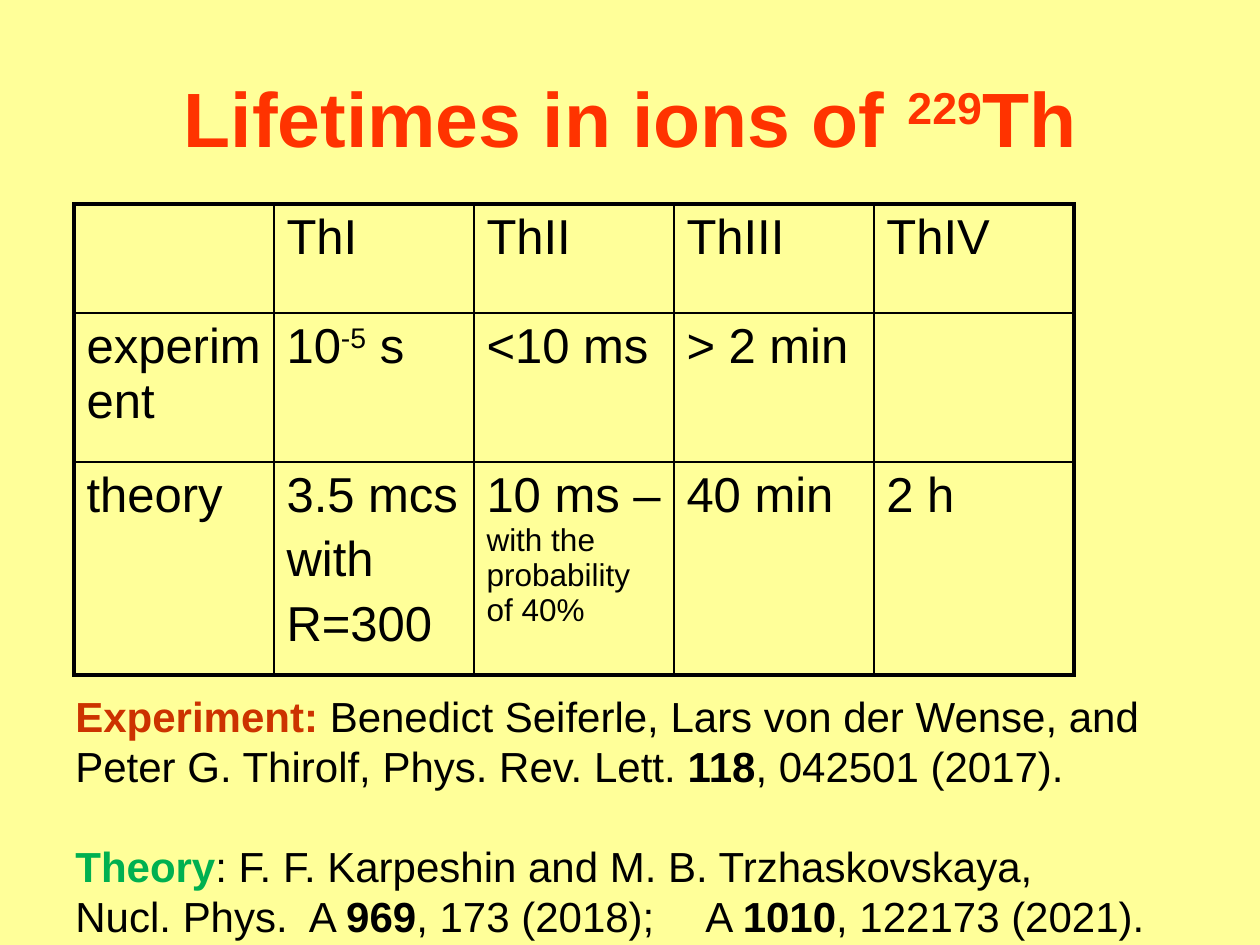
from lxml.etree import SubElement
from pptx import Presentation
from pptx.dml.color import RGBColor
from pptx.enum.text import MSO_ANCHOR, PP_ALIGN
from pptx.oxml.ns import qn
from pptx.util import Emu, Pt

PX = 914400 / 126
THEME = {
    "font": "Arial",
    "background": "FFFF99",
    "title": "FF3300",
    "text": "000000",
    "experiment": "CC3300",
    "theory": "00B050",
    "title_size": 44,
    "cell_size": 28,
    "note_size": 18,
    "reference_size": 24,
}


def px(*lengths):
    return [Emu(round(length * PX)) for length in lengths]


def add_span(para, text, size, color="text", bold=False, raised=False):
    span = para.add_run()
    span.text = text
    span.font.name = THEME["font"]
    span.font.size = Pt(THEME[size])
    span.font.bold = bold
    span.font.color.rgb = RGBColor.from_string(THEME[color])
    if raised:
        span.font._element.set("baseline", "30000")


deck = Presentation()
deck.slide_width, deck.slide_height = px(1260, 945)
page = deck.slides.add_slide(deck.slide_layouts[5])
page.background.fill.solid()
page.background.fill.fore_color.rgb = RGBColor.from_string(THEME["background"])

# Title
title = page.shapes.title
title.left, title.top, title.width, title.height = px(63, 38, 1134, 158)
title.text_frame.vertical_anchor = MSO_ANCHOR.MIDDLE
para = title.text_frame.paragraphs[0]
para.alignment = PP_ALIGN.CENTER
for text, raised in [("Lifetimes in ions of ", False), ("229", True), ("Th", False)]:
    add_span(para, text, "title_size", "title", bold=True, raised=raised)

# Lifetimes table: each cell is a list of paragraphs, each a list of (text, size, raised)
def_size = "cell_size"
lifetimes = [
    ["", "ThI", "ThII", "ThIII", "ThIV"],
    ["experiment", [[("10", def_size, False), ("-5", def_size, True), (" s", def_size, False)]],
     "<10 ms", "> 2 min", ""],
    ["theory", [[(line, def_size, False)] for line in ("3.5 mcs", "with", "R=300")],
     [[("10 ms – ", def_size, False), ("with the probability of 40%", "note_size", False)]],
     "40 min", "2 h"],
]
row_heights = px(109, 149, 213)
column_width = px(200)[0]
row_count, column_count = len(lifetimes), len(lifetimes[0])
table = page.shapes.add_table(
    row_count, column_count, *px(74, 204), column_width * column_count, sum(row_heights)
).table
table.first_row = table.horz_banding = False
for column in table.columns:
    column.width = column_width

for r, values in enumerate(lifetimes):
    table.rows[r].height = row_heights[r]
    for c, value in enumerate(values):
        cell = table.cell(r, c)
        paragraphs = [[(value, def_size, False)]] if isinstance(value, str) else value
        for index, spans in enumerate(paragraphs):
            para = cell.text_frame.paragraphs[0] if index == 0 else cell.text_frame.add_paragraph()
            para.font.size = Pt(THEME[def_size])
            if index:
                para.space_before = Pt(5.6)
            for text, size, raised in spans:
                if text:
                    add_span(para, text, size, raised=raised)
        # Thick lines around the table, thin lines inside it
        outer_sides = {"a:lnL": c == 0, "a:lnR": c == column_count - 1,
                       "a:lnT": r == 0, "a:lnB": r == row_count - 1}
        properties = cell._tc.get_or_add_tcPr()
        for side, outer in outer_sides.items():
            border = SubElement(properties, qn(side), w=str(Pt(2.25 if outer else 1)))
            fill = SubElement(border, qn("a:solidFill"))
            SubElement(fill, qn("a:srgbClr"), val=THEME["text"])
        cell.fill.background()

# References: each line is a list of (text, colour, bold)
references = [
    [("Experiment: ", "experiment", True),
     ("Benedict Seiferle, Lars von der Wense, and", "text", False)],
    [("Peter G. Thirolf, Phys. Rev. Lett. ", "text", False), ("118", "text", True),
     (", 042501 (2017).", "text", False)],
    [("Theory", "theory", True),
     (": F. F. Karpeshin and M. B. Trzhaskovskaya,", "text", False)],
    [("Nucl. Phys.  A ", "text", False), ("969", "text", True),
     (", 173 (2018); \tA ", "text", False), ("1010", "text", True),
     (", 122173 (2021).", "text", False)],
]
box = page.shapes.add_textbox(*px(63, 684, 1114, 267))
frame = box.text_frame
frame.word_wrap = False
for index, spans in enumerate(references):
    para = frame.paragraphs[0] if index == 0 else frame.add_paragraph()
    if index == 2:
        para.space_before = Pt(28)
    for text, color, bold in spans:
        add_span(para, text, "reference_size", color, bold)

deck.save("out.pptx")
